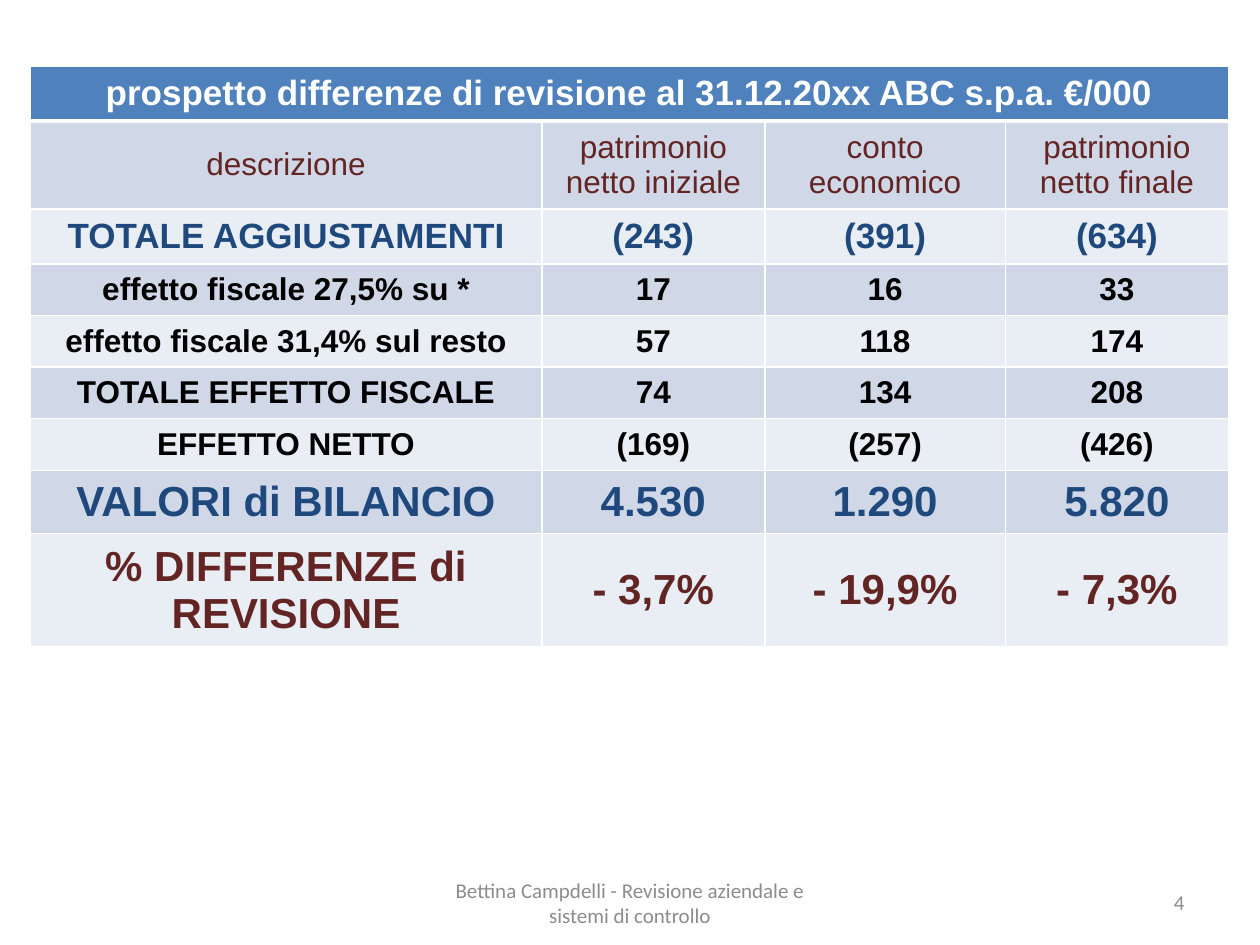
from lxml.etree import SubElement
from pptx import Presentation
from pptx.dml.color import RGBColor
from pptx.enum.text import MSO_ANCHOR, PP_ALIGN
from pptx.oxml.ns import qn
from pptx.util import Inches, Pt

COLORS = {
    "white": "FFFFFF", "black": "000000", "grey": "8C8C8C",
    "header": "4F81BD", "band_dark": "D0D8E8", "band_light": "E9EDF4",
    "navy": "1F497D", "maroon": "632523",
}

# Text formats of the rows and the footer
HEADING = {"size": 20, "bold": True, "color": "white", "name": "Arial"}
LABEL = {**HEADING, "size": 18, "bold": False, "color": "maroon"}
ADJUSTMENT = {**HEADING, "color": "navy"}
DETAIL = {**HEADING, "size": 18, "color": "black"}
BALANCE = {**ADJUSTMENT, "size": 24}
PERCENT = {**BALANCE, "color": "maroon"}
FOOTER = {"size": 12, "bold": False, "color": "grey", "name": "Calibri"}

ROWS = [
    (HEADING, ["prospetto differenze di revisione al 31.12.20xx ABC s.p.a. €/000"]),
    (LABEL, ["descrizione", "patrimonio netto iniziale", "conto economico",
             "patrimonio netto finale"]),
    (ADJUSTMENT, ["TOTALE AGGIUSTAMENTI", "(243)", "(391)", "(634)"]),
    (DETAIL, ["effetto fiscale 27,5% su *", "17", "16", "33"]),
    (DETAIL, ["effetto fiscale 31,4% sul resto", "57", "118", "174"]),
    (DETAIL, ["TOTALE EFFETTO FISCALE", "74", "134", "208"]),
    (DETAIL, ["EFFETTO NETTO", "(169)", "(257)", "(426)"]),
    (BALANCE, ["VALORI di BILANCIO", "4.530", "1.290", "5.820"]),
    (PERCENT, ["% DIFFERENZE di REVISIONE", "- 3,7%", "- 19,9%", "- 7,3%"]),
]
COLUMN_WIDTHS = [4.06, 1.77, 1.91, 1.77]
ROW_HEIGHT = 0.41


class SlideBuilder:
    def __init__(self, deck):
        self.width, self.height = deck.slide_width, deck.slide_height
        self.slide = deck.slides.add_slide(deck.slide_layouts[6])

    def fill_text(self, frame, text, style, align):
        paragraph = frame.paragraphs[0]
        paragraph.alignment = align
        run = paragraph.add_run()
        run.text = text
        values = {"size": Pt(style["size"]), "bold": style["bold"], "name": style["name"]}
        for attribute, value in values.items():
            setattr(run.font, attribute, value)
        run.font.color.rgb = RGBColor.from_string(COLORS[style["color"]])

    def text(self, left, top, width, height, text, style, align):
        """Place a text box; lengths are shares of the slide."""
        box = self.slide.shapes.add_textbox(
            int(left * self.width), int(top * self.height),
            int(width * self.width), int(height * self.height))
        box.text_frame.word_wrap = True
        box.text_frame.vertical_anchor = MSO_ANCHOR.MIDDLE
        self.fill_text(box.text_frame, text, style, align)

    def borders(self, cell, is_header):
        widths = {"a:lnL": 1, "a:lnR": 1, "a:lnT": 1, "a:lnB": 3 if is_header else 1}
        if not is_header:
            del widths["a:lnT"]
        properties = cell._tc.get_or_add_tcPr()
        for position, (tag, points) in enumerate(widths.items()):
            line = SubElement(properties, qn(tag), w=str(Pt(points)))
            fill = SubElement(line, qn("a:solidFill"))
            SubElement(fill, qn("a:srgbClr"), val=COLORS["white"])
            properties.insert(position, line)

    def table(self, left, top, rows):
        grid = self.slide.shapes.add_table(
            len(rows), len(COLUMN_WIDTHS), int(left * self.width), int(top * self.height),
            Inches(sum(COLUMN_WIDTHS)), Inches(ROW_HEIGHT * len(rows))).table
        for column, width in zip(grid.columns, COLUMN_WIDTHS):
            column.width = Inches(width)
        grid.cell(0, 0).merge(grid.cell(0, len(COLUMN_WIDTHS) - 1))

        for index, (style, texts) in enumerate(rows):
            grid.rows[index].height = Inches(ROW_HEIGHT)
            band = "header" if index == 0 else ("band_light", "band_dark")[index % 2]
            for cell in grid.rows[index].cells:
                cell.fill.solid()
                cell.fill.fore_color.rgb = RGBColor.from_string(COLORS[band])
                cell.vertical_anchor = MSO_ANCHOR.MIDDLE
                self.borders(cell, index == 0)
            for column, text in enumerate(texts):
                self.fill_text(grid.cell(index, column).text_frame, text, style,
                               PP_ALIGN.CENTER)


def main():
    deck = Presentation()
    deck.slide_width, deck.slide_height = Inches(10), Inches(7.5)
    page = SlideBuilder(deck)

    # Footer and page number
    page.text(0.34, 0.93, 0.32, 0.05,
              "Bettina Campdelli - Revisione aziendale e sistemi di controllo",
              FOOTER, PP_ALIGN.CENTER)
    page.text(0.72, 0.93, 0.23, 0.05, "4", FOOTER, PP_ALIGN.RIGHT)

    # Audit differences
    page.table(0.024, 0.07, ROWS)

    deck.save("out.pptx")


if __name__ == "__main__":
    main()
